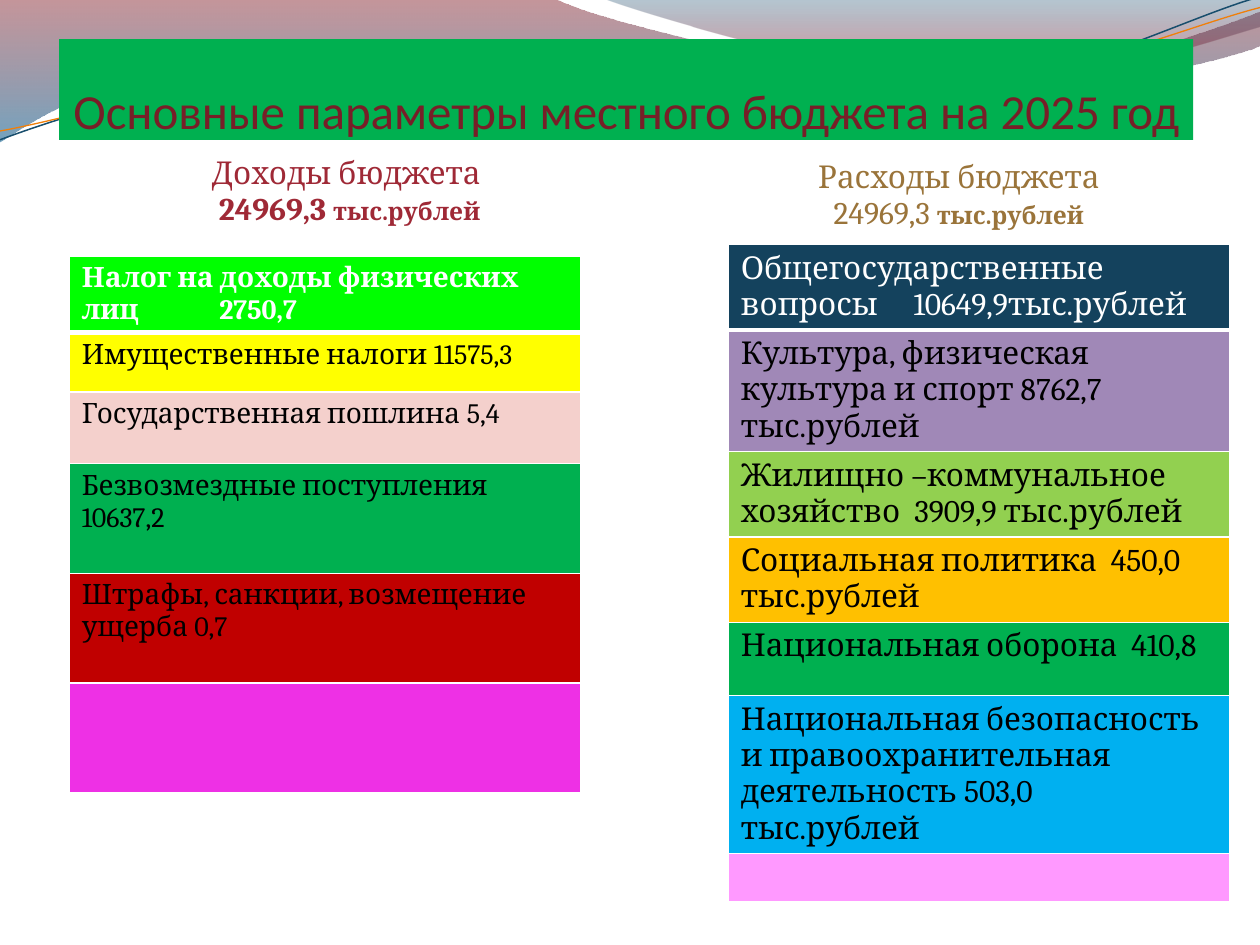
from pptx import Presentation
from pptx import util as u
from pptx.dml.color import RGBColor as Rgb
from pptx.enum import text as t
from pptx.oxml.ns import qn
from lxml import etree

WIDE, HIGH = 10, 7.5
BLACK, WHITE = Rgb(0, 0, 0), Rgb(255, 255, 255)
GREEN, WINE = Rgb(0x00, 0xB0, 0x50), Rgb(0x77, 0x1F, 0x28)
RED, GOLD = Rgb(0x9F, 0x29, 0x36), Rgb(0x9A, 0x74, 0x3A)
NAVY, ORANGE = Rgb(0x18, 0x4E, 0x6D), Rgb(0xF0, 0x7F, 0x09)

# Waves: a start, then line ends (2 numbers) or Bezier curves (6 numbers)
# Gradient stops: place, colour, opacity in percent
WAVES = [
    ((0, 0), [(4.4, -0.01), (4.76, .17, 6.64, .63, 7.58, .63),
              (8.53, .63, 9.58, .26, 10, .09), (10.01, .36),
              (9.83, .44, 8.7, .76, 7.46, .75), (6.22, .75, 3.82, .28, 2.57, .34),
              (1.29, .36, .46, .83, -0.01, 1.13), (0, 0)],
     [(0, Rgb(0x7E, 0x16, 0x21), 45), (1, Rgb(0x00, 0x56, 0x89), 55)]),
    ((4.79, -0.01), [(5.09, .11, 6.82, .62, 7.69, .65),
                     (8.56, .69, 9.61, .32, 10, .21), (10, 0), (4.79, -0.01)],
     [(0, Rgb(0x09, 0x44, 0x67), 30), (.8, Rgb(0xA1, 0x0F, 0x1F), 45)]),
]
LINES = [
    ((0, 1.11), [(.48, .93, 1.58, .57, 2.77, .52), (3.95, .47, 5.93, .89, 7.13, .8),
                 (8.33, .71, 9.38, .15, 9.98, -0.02)], NAVY, .85),
    ((0, 1.04), [(.47, .96, 1.64, .61, 2.83, .56), (4.03, .51, 5.97, .84, 7.17, .75),
                 (8.36, .67, 9.41, .21, 10, .06)], ORANGE, .75),
]

# Budget rows: text, height, fill
INCOME = [
    ("Налог на доходы физических лиц\t2750,7", .43, Rgb(0, 255, 0)),
    ("Имущественные налоги 11575,3", .47, Rgb(255, 255, 0)),
    ("Государственная пошлина 5,4", .57, Rgb(0xF4, 0xD0, 0xCC)),
    ("Безвозмездные поступления 10637,2", .87, GREEN),
    ("Штрафы, санкции, возмещение ущерба 0,7", .87, Rgb(0xC0, 0, 0)),
    ("", .87, Rgb(0xEE, 0x30, 0xE5)),
]
COSTS = [
    ("Общегосударственные вопросы\t10649,9тыс.рублей", .65, Rgb(0x14, 0x42, 0x5D)),
    ("Культура, физическая культура и спорт 8762,7 тыс.рублей", .65,
     Rgb(0xA0, 0x88, 0xB7)),
    ("Жилищно –коммунальное  хозяйство  3909,9 тыс.рублей", .65, Rgb(0x92, 0xD0, 0x50)),
    ("Социальная политика  450,0 тыс.рублей", .44, Rgb(0xFF, 0xC0, 0)),
    ("Национальная оборона  410,8", .58, GREEN),
    ("Национальная безопасность и правоохранительная деятельность 503,0 тыс.рублей",
     .93, Rgb(0, 0xB0, 0xF0)),
    ("", .38, Rgb(0xFF, 0x99, 0xFF)),
]


def put(obj, vals):
    for key, val in vals.items():
        setattr(obj, key, val)


def node(parent, tag, **vals):
    """Add an XML child with attributes."""
    child = etree.SubElement(parent, qn(tag))
    for key, val in vals.items():
        child.set(key, str(val))
    return child


def write(para, words, size, color, bold=False, face="Cambria"):
    run = para.add_run()
    run.text = words
    put(run.font, dict(name=face, size=u.Pt(size), bold=bold))
    run.font.color.rgb = color


def curve(slide, start, parts, close):
    """Build the outline from its corners, then bend the curved sides."""
    ends = [tuple(map(u.Inches, part[-2:])) for part in parts]
    form = slide.shapes.build_freeform(*map(u.Inches, start), scale=1)
    form.add_line_segments(ends, close=close)
    shape = form.convert_to_shape()
    shape.shadow.inherit = False
    sides = list(shape._element.spPr.iter(qn("a:lnTo")))
    for side, part in zip(sides, parts):
        if len(part) == 6:
            bend = etree.Element(qn("a:cubicBezTo"))
            for x, y in zip(part[::2], part[1::2]):
                node(bend, "a:pt", x=u.Inches(x) - shape.left, y=u.Inches(y) - shape.top)
            side.getparent().replace(side, bend)
    return shape


def wave(slide, start, parts, stops):
    shape = curve(slide, start, parts, True)
    shape.line.fill.background()
    shape.fill.gradient()
    shape.fill.gradient_angle = 270
    for stop, (place, color, _) in zip(shape.fill.gradient_stops, stops):
        stop.position = place
        stop.color.rgb = color
    for tone, stop in zip(list(shape._element.spPr.iter(qn("a:srgbClr"))), stops):
        node(tone, "a:alpha", val=stop[2] * 1000)


def strand(slide, start, parts, color, width):
    shape = curve(slide, start, parts, False)
    shape.fill.background()
    shape.line.color.rgb = color
    shape.line.width = u.Pt(width)


def grid(slide, box, rows):
    """Add a one-column table with the given row heights."""
    frame = slide.shapes.add_table(len(rows), 1, *map(u.Inches, box), u.Inches(sum(rows)))
    table = frame.table
    table.horz_banding = False
    for row, high in zip(table.rows, rows):
        row.height = u.Inches(high)
    return table


def head(slide, box, high, name, total, color, bold, shift=0):
    table = grid(slide, box, [high])
    table.first_row = False
    cell = table.cell(0, 0)
    cell.fill.background()
    cell.margin_left = u.Inches(.1 + shift)
    first = cell.text_frame.paragraphs[0]
    second = cell.text_frame.add_paragraph()
    for para in (first, second):
        para.alignment = t.PP_ALIGN.CENTER
    write(first, name, 18, color)
    write(second, total + " ", 18, color, bold)
    write(second, "тыс.рублей", 14, color, True)


def budget(slide, box, rows, size, bold, tab):
    table = grid(slide, box, [row[1] for row in rows])
    for n, (words, _, color) in enumerate(rows):
        cell = table.cell(n, 0)
        if n == 0:
            # Thick white rule under the first row
            edge = node(cell._tc.get_or_add_tcPr(), "a:lnB", w=u.Pt(3))
            node(node(edge, "a:solidFill"), "a:srgbClr", val=WHITE)
        cell.fill.solid()
        cell.fill.fore_color.rgb = color
        para = cell.text_frame.paragraphs[0]
        if words:
            write(para, words, size, BLACK if n else WHITE, bold and n == 0)
        else:
            node(para._p, "a:endParaRPr", sz=1600)
        if "\t" in words:
            tabs = node(para._p.get_or_add_pPr(), "a:tabLst")
            node(tabs, "a:tab", pos=u.Inches(tab), algn="l")


def title(slide, words):
    shape = slide.shapes.title
    put(shape, dict(left=u.Inches(.47), top=u.Inches(.31),
                    width=u.Inches(9), height=u.Inches(.8)))
    shape.fill.solid()
    shape.fill.fore_color.rgb = GREEN
    put(shape.text_frame, dict(margin_left=0, margin_right=0, margin_bottom=0,
                               margin_top=u.Inches(.05), word_wrap=True,
                               auto_size=t.MSO_AUTO_SIZE.NONE,
                               vertical_anchor=t.MSO_ANCHOR.BOTTOM))
    para = shape.text_frame.paragraphs[0]
    para.alignment = t.PP_ALIGN.CENTER
    write(para, words, 28, WINE, face="Calibri")
    # Bring the title in front of the waves
    slide.shapes._spTree.append(shape._element)


def main():
    deck = Presentation()
    put(deck, dict(slide_width=u.Inches(WIDE), slide_height=u.Inches(HIGH)))
    slide = deck.slides.add_slide(deck.slide_layouts[5])

    # Waves along the top
    for item in WAVES:
        wave(slide, *item)
    for item in LINES:
        strand(slide, *item)
    title(slide, "Основные параметры местного бюджета на 2025 год")

    # Column heads
    head(slide, (.52, 1.19, 4.51), .77, "Доходы бюджета ", "24969,3", RED, True)
    head(slide, (5.14, 1.22, 4.47), .76, "Расходы бюджета", "24969,3", GOLD, False, .47)

    # Income and costs
    budget(slide, (.55, 2.03, 4.06), INCOME, 16, True, 1.09)
    budget(slide, (5.78, 1.94, 3.98), COSTS, 18, False, 1.37)
    deck.save("out.pptx")


if __name__ == "__main__":
    main()
